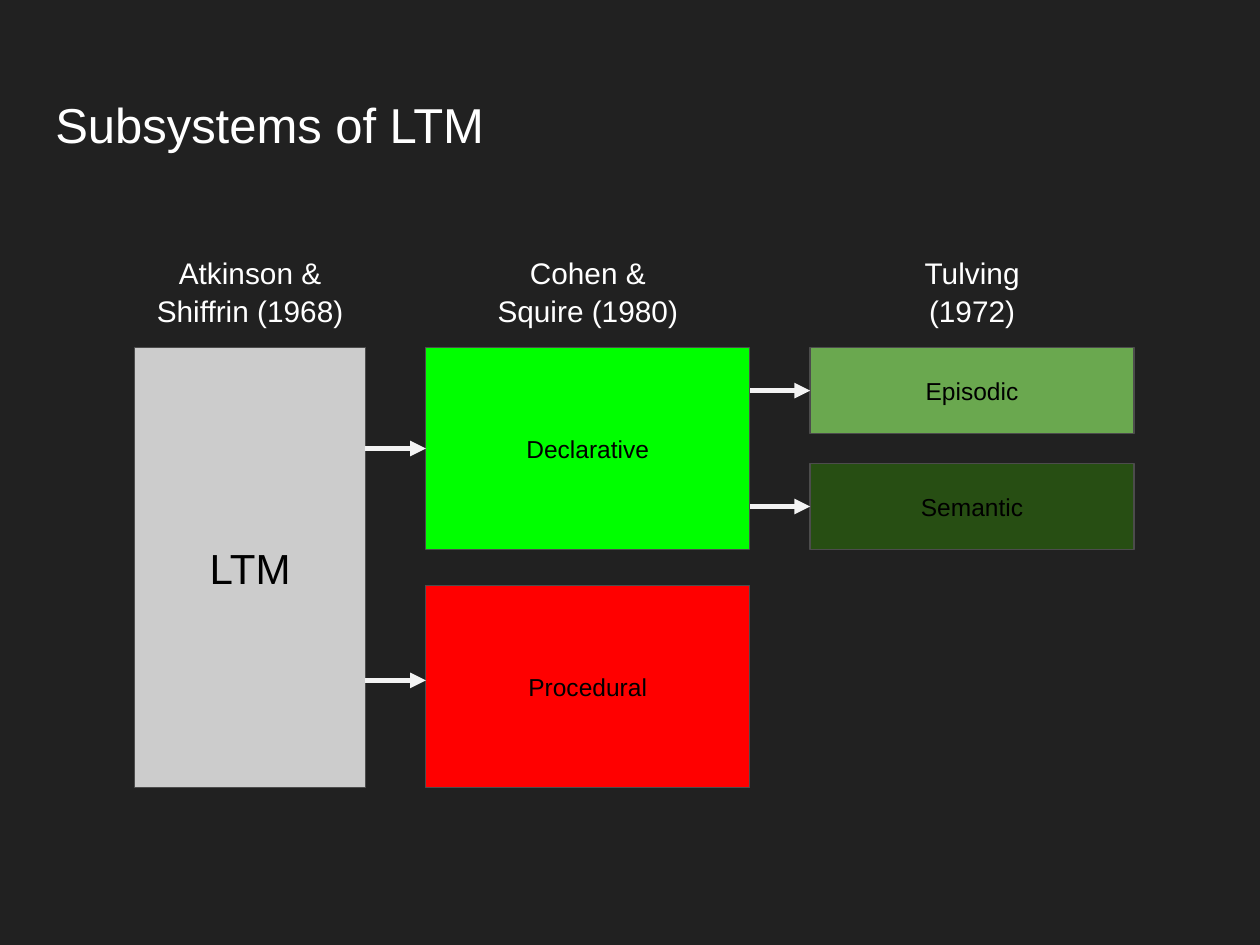
from dataclasses import dataclass
from typing import Optional

from lxml import etree
from pptx import Presentation
from pptx.dml.color import RGBColor
from pptx.enum.shapes import MSO_CONNECTOR, MSO_SHAPE
from pptx.enum.text import MSO_ANCHOR, PP_ALIGN
from pptx.oxml.ns import qn
from pptx.util import Inches, Pt

RECT = MSO_SHAPE.RECTANGLE
STRAIGHT = MSO_CONNECTOR.STRAIGHT
LEFT, CENTER = PP_ALIGN.LEFT, PP_ALIGN.CENTER
TOP, MIDDLE = MSO_ANCHOR.TOP, MSO_ANCHOR.MIDDLE
LEFT_SIDE = 1

FONT = "Arial"
DARK = RGBColor(0x21, 0x21, 0x21)
WHITE = RGBColor(0xFF, 0xFF, 0xFF)
BLACK = RGBColor(0, 0, 0)
EDGE = RGBColor(0x4C, 0x4C, 0x4C)
ARROW = RGBColor(0xF3, 0xF3, 0xF3)
GRAY = RGBColor(0xCC, 0xCC, 0xCC)
RED = RGBColor(0xFF, 0, 0)
LIME = RGBColor(0, 0xFF, 0)
GREEN = RGBColor(0x6A, 0xA8, 0x4F)
FOREST = RGBColor(0x27, 0x4E, 0x13)

# Columns and rows, in inches
GAP = 0.48
ROW = 2.76
WIDE = 2.57
COL_A, COL_B, COL_C = 1.07, 3.38, 6.43
HEAD_W = 1.69


@dataclass
class Box:
    text: str
    x: float
    y: float
    w: float
    h: float
    fill: RGBColor
    size: int = 14
    entry: Optional[float] = None  # height at which an arrow enters
    joined: bool = False  # the arrow enters at the middle of the left side


@dataclass
class Head:
    text: str
    x: float  # left of the column below
    w: float  # width of the column below


BOXES = [
    Box("LTM", COL_A, ROW, 1.83, 3.49, GRAY, 24),
    Box("Procedural", COL_B, 4.65, WIDE, 1.6, RED, entry=5.4),
    Box("Declarative", COL_B, ROW, WIDE, 1.6, LIME, entry=3.56, joined=True),
    Box("Episodic", COL_C, ROW, WIDE, 0.68, GREEN, entry=3.1, joined=True),
    Box("Semantic", COL_C, 3.68, WIDE, 0.68, FOREST, entry=4.02, joined=True),
]
HEADS = [
    Head("Atkinson & Shiffrin (1968)", COL_A, 1.83),
    Head("Cohen & Squire (1980)", COL_B, WIDE),
    Head("Tulving (1972)", COL_C, WIDE),
]


def write(shape, text: str, size: int, color: RGBColor, align, anchor):
    frame = shape.text_frame
    frame.text = text
    frame.word_wrap = True
    frame.vertical_anchor = anchor
    frame.margin_left = frame.margin_right = Inches(0.1)
    frame.margin_top = frame.margin_bottom = Inches(0.1)
    part = frame.paragraphs[0]
    part.alignment = align
    font = part.runs[0].font
    font.name, font.size = FONT, Pt(size)
    font.color.rgb = color
    return part


def add_text(slide, text: str, x: float, y: float, w: float, h: float,
             size: int, align):
    shape = slide.shapes.add_textbox(Inches(x), Inches(y), Inches(w), Inches(h))
    return write(shape, text, size, WHITE, align, TOP)


def add_box(slide, box: Box):
    shape = slide.shapes.add_shape(
        RECT, Inches(box.x), Inches(box.y), Inches(box.w), Inches(box.h))
    shape.shadow.inherit = False
    shape.fill.solid()
    shape.fill.fore_color.rgb = box.fill
    shape.line.color.rgb = EDGE
    shape.line.width = Pt(0.75)
    write(shape, box.text, box.size, BLACK, CENTER, MIDDLE)
    return shape


def add_arrow(slide, box: Box, shape) -> None:
    y = Inches(box.entry)
    line = slide.shapes.add_connector(
        STRAIGHT, Inches(box.x), y, Inches(box.x - GAP), y)
    if box.joined:
        line.begin_connect(shape, LEFT_SIDE)
    line.line.color.rgb = ARROW
    line.line.width = Pt(3)
    props = line._element.spPr
    etree.SubElement(props.find(qn("a:ln")), qn("a:headEnd"), type="triangle")
    etree.SubElement(props, qn("a:effectLst"))


def main() -> None:
    deck = Presentation()
    deck.slide_width, deck.slide_height = Inches(10), Inches(7.5)
    slide = deck.slides.add_slide(deck.slide_layouts[6])
    slide.background.fill.solid()
    slide.background.fill.fore_color.rgb = DARK

    # Title
    add_text(slide, "Subsystems of LTM", 0.34, 0.65, 9.32, 0.83, 28, LEFT)

    # Boxes, then the arrows into them
    shapes = [add_box(slide, box) for box in BOXES]
    for box, shape in zip(BOXES, shapes):
        if box.entry is not None:
            add_arrow(slide, box, shape)

    # Column heads, centred over their columns
    for head in HEADS:
        x = head.x + (head.w - HEAD_W) / 2
        part = add_text(slide, head.text, x, 1.91, HEAD_W, 0.5, 17, CENTER)
        part.line_spacing = 1.05

    deck.save("out.pptx")


if __name__ == "__main__":
    main()
